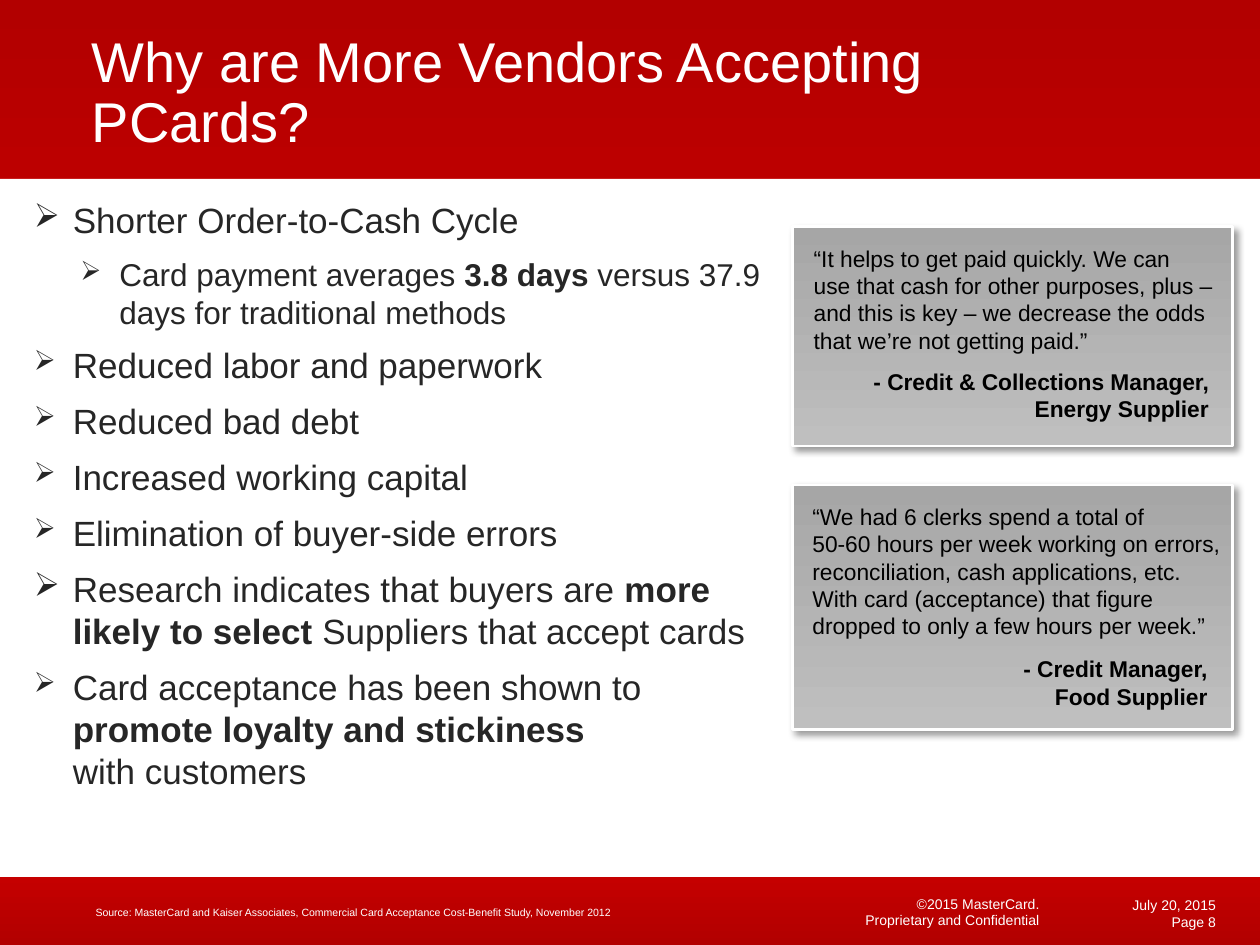
"""Build the slide on why more vendors accept purchasing cards."""
import pptx
import pptx.dml.color
import pptx.enum.shapes
import pptx.enum.text
import pptx.oxml
import pptx.oxml.ns
import pptx.util

WIDE, HIGH = pptx.util.Inches(10), pptx.util.Inches(7.5)
COLS, ROWS = 100, 75
SPACE = pptx.oxml.ns.nsdecls("a")
ALIGN = pptx.enum.text.PP_ALIGN
ANCHOR = pptx.enum.text.MSO_ANCHOR
BAND = [(0, "B20000"), (19, "E60000"), (100, "B20000")]
GREY = [(1, "BFBFBF"), (100, "A6A6A6")]
POINTS = [
    (1, 95, "Shorter Order-to-Cash Cycle"),
    (2, 85, "Card payment averages **3.8 days** versus 37.9 days for traditional methods"),
    (1, 80, "Reduced labor and paperwork"),
    (1, 80, "Reduced bad debt"),
    (1, 80, "Increased working capital"),
    (1, 80, "Elimination of buyer-side errors"),
    (1, 95, "Research indicates that buyers are **more likely to select **Suppliers that accept cards"),
    (1, 80, "Card acceptance has been shown to **promote loyalty and stickiness \n**with customers"),
]
LEVELS = {1: (20, 0.31), 2: (18, 0.68)}
CARDS = [
    ((62.9, 38.5, 34.9, 19.4), (63.5, 39.4, 34.3, 11.9), (64.9, 51.5, 31.9, 5.4),
     "“We had 6 clerks spend a total of \n50-60 hours per week working on errors, "
     "reconciliation, cash applications, etc. With card (acceptance) that figure "
     "dropped to only a few hours per week.”",
     "- Credit Manager,\nFood Supplier"),
    ((62.9, 18, 34.9, 17.4), (63.6, 18.9, 33.6, 9.8), (65, 28.7, 31.9, 5.4),
     "“It helps to get paid quickly. We can use that cash for other purposes, "
     "plus – and this is key – we decrease the odds that we’re not getting paid.”",
     "- Credit & Collections Manager, Energy Supplier"),
]


def rgb(code):
    """Turn a hex string into a colour."""
    return pptx.dml.color.RGBColor.from_string(code)


def place(box):
    """Turn grid columns and rows into slide lengths."""
    left, top, width, height = box
    return (int(left * WIDE / COLS), int(top * HIGH / ROWS),
            int(width * WIDE / COLS), int(height * HIGH / ROWS))


def style(para, size, color, bold=None):
    """Set the font of a paragraph."""
    font = para.font
    font.name, font.size, font.bold = "Arial", pptx.util.Pt(size), bold
    font.color.rgb = rgb(color)


def write(para, text):
    """Add runs, with double stars around bold words."""
    for part, chunk in enumerate(text.split("**")):
        for row, line in enumerate(chunk.split("\n")):
            if row:
                para.add_line_break()
            if line:
                run = para.add_run()
                run.text = line
                if part % 2:
                    run.font.bold = True


def frame(slide, box, anchor=ANCHOR.TOP, tight=False):
    """Add a wrapping text box and return its frame."""
    body = slide.shapes.add_textbox(*place(box)).text_frame
    body.word_wrap, body.vertical_anchor = True, anchor
    if tight:
        body.margin_top = body.margin_bottom = 0
    return body


def label(slide, box, text, size, color, align=ALIGN.LEFT, bold=None, gap=None, **kind):
    """Add a text box with one paragraph."""
    para = frame(slide, box, **kind).paragraphs[0]
    para.alignment, para.line_spacing = align, gap
    style(para, size, color, bold)
    write(para, text)


def panel(slide, box):
    """Add a plain rectangle without line or shadow."""
    shape = slide.shapes.add_shape(pptx.enum.shapes.MSO_SHAPE.RECTANGLE, *place(box))
    shape.shadow.inherit = False
    shape.line.fill.background()
    return shape


def blend(shape, stops):
    """Fill a shape with a gradient that rises from its foot."""
    shape.fill.gradient()
    shape.fill.gradient_angle = 90
    nodes = shape.element.spPr.find(".//" + pptx.oxml.ns.qn("a:gsLst"))
    for node in list(nodes):
        nodes.remove(node)
    for share, code in stops:
        nodes.append(pptx.oxml.parse_xml(
            f'<a:gs {SPACE} pos="{share * 1000}"><a:srgbClr val="{code}"/></a:gs>'))


def shade(shape):
    """Give a shape a soft shadow to the lower right."""
    blur, shift = pptx.util.Pt(4), pptx.util.Pt(3)
    shape.element.spPr.find(pptx.oxml.ns.qn("a:effectLst")).append(pptx.oxml.parse_xml(
        f'<a:outerShdw {SPACE} blurRad="{blur}" dist="{shift}" dir="2700000" algn="tl" '
        'rotWithShape="0"><a:srgbClr val="000000"><a:alpha val="40000"/></a:srgbClr>'
        '</a:outerShdw>'))


def card(slide, box, words, name, quote, source):
    """Add a quote card with its speaker."""
    shape = panel(slide, box)
    blend(shape, GREY)
    shape.line.color.rgb = rgb("FFFFFF")
    shape.line.width = pptx.util.Pt(1.5)
    shade(shape)
    label(slide, words, quote, 13, "000000")
    label(slide, name, source, 13, "000000", ALIGN.RIGHT, True)


def bullet(para, left, share):
    """Give a paragraph an arrow bullet and a hanging indent."""
    props = para._p.get_or_add_pPr()
    props.set("marL", str(pptx.util.Inches(left)))
    props.set("indent", str(-pptx.util.Inches(0.31)))
    for tag in (f'buSzPct {SPACE} val="{share * 1000}"', f'buChar {SPACE} char="➢"'):
        props.append(pptx.oxml.parse_xml(f"<a:{tag}/>"))


def points(slide, box):
    """Add the bulleted reasons."""
    body = frame(slide, box)
    for row, (level, share, text) in enumerate(POINTS):
        para = body.add_paragraph() if row else body.paragraphs[0]
        size, left = LEVELS[level]
        para.level = level - 1
        bullet(para, left, share)
        para.space_after = pptx.util.Pt(0.4 * size)
        style(para, size, "262626")
        write(para, text)


def head(slide, box, text):
    """Move the title to the front and format it."""
    title = slide.shapes.title
    title.element.getparent().append(title.element)
    title.left, title.top, title.width, title.height = place(box)
    body = title.text_frame
    body.auto_size = pptx.enum.text.MSO_AUTO_SIZE.NONE
    body.vertical_anchor = ANCHOR.BOTTOM
    para = body.paragraphs[0]
    para.alignment, para.line_spacing = ALIGN.LEFT, 0.9
    style(para, 32, "FFFFFF")
    write(para, text)


def foot(slide):
    """Add the source, copyright, date and page."""
    label(slide, (6.6, 71.5, 63.1, 1.9),
          "Source: MasterCard and Kaiser Associates, Commercial Card Acceptance "
          "Cost-Benefit Study, November 2012", 6, "FFFFFF", gap=0.9)
    label(slide, (59.2, 70.8, 24.3, 3.3), "©2015 MasterCard.\nProprietary and Confidential",
          8, "FFFFFF", ALIGN.RIGHT, gap=0.95, anchor=ANCHOR.MIDDLE, tight=True)
    label(slide, (83.5, 70.8, 14, 1.7), "July 20, 2015", 8, "FFFFFF", ALIGN.RIGHT,
          anchor=ANCHOR.BOTTOM, tight=True)
    label(slide, (83.5, 72.5, 14, 1.8), "Page 8", 8, "FFFFFF", ALIGN.RIGHT, tight=True)


def main():
    """Build and save the slide."""
    deck = pptx.Presentation()
    deck.slide_width, deck.slide_height = WIDE, HIGH
    slide = deck.slides.add_slide(deck.slide_layouts[5])
    blend(panel(slide, (0, 0, COLS, ROWS)), BAND)
    page = panel(slide, (0, 14.2, COLS, 55.4))
    page.fill.solid()
    page.fill.fore_color.rgb = rgb("FFFFFF")
    head(slide, (6.3, 3.9, 75.2, 8.9), "Why are More Vendors Accepting PCards?")
    points(slide, (1.7, 15.3, 60, 54.6))
    for item in CARDS:
        card(slide, *item)
    foot(slide)
    deck.save("out.pptx")


if __name__ == "__main__":
    main()
